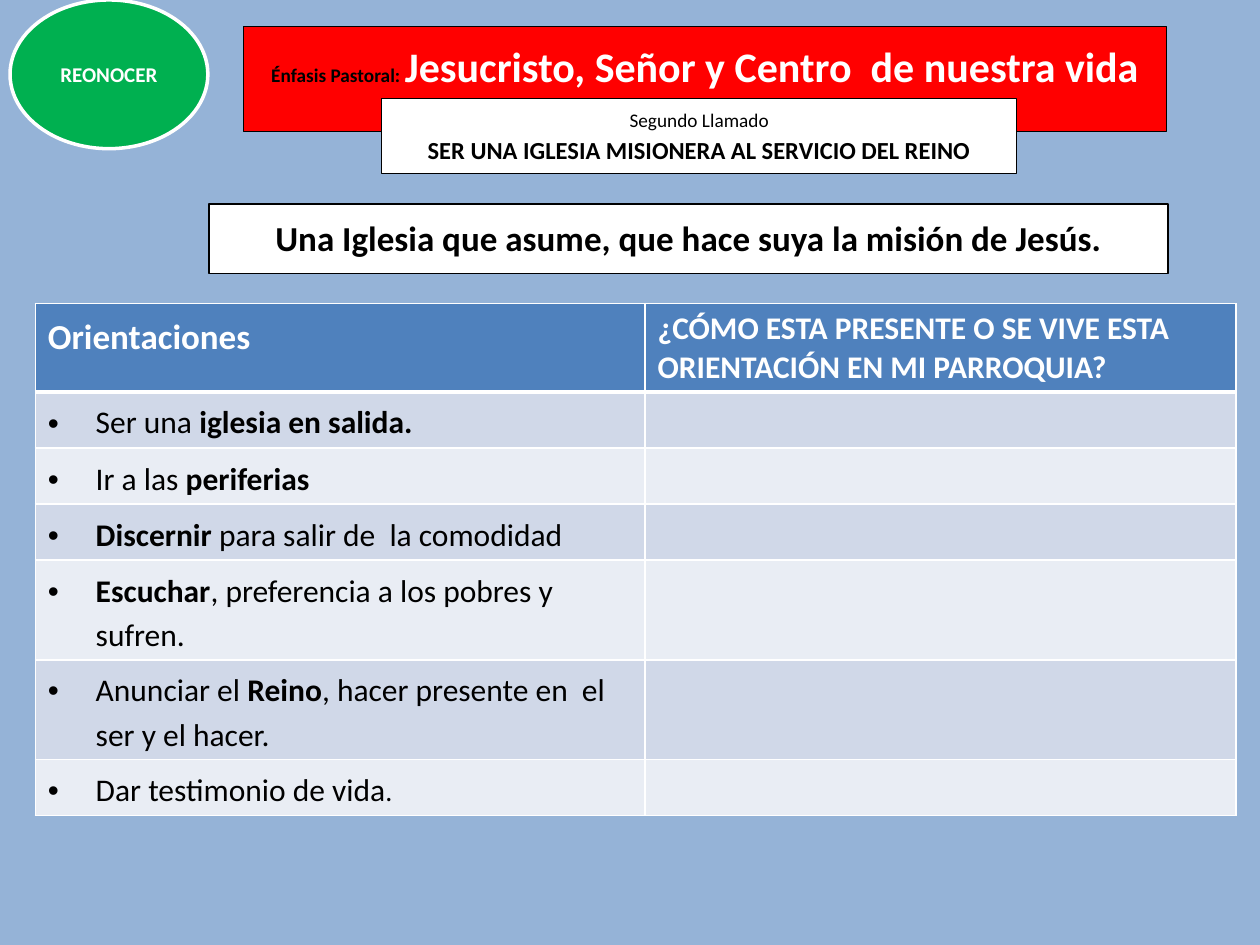
from pptx import Presentation
from pptx.dml.color import RGBColor as Rgb
from pptx.enum.shapes import MSO_SHAPE as Kind
from pptx.enum.text import MSO_ANCHOR as Anchor, MSO_AUTO_SIZE as Auto, PP_ALIGN as Align
from pptx.oxml.ns import qn
from pptx.util import Inches, Pt
from lxml.etree import SubElement as Sub

WIDE, HIGH = Inches(10), Inches(7.5)
COLS, ROWS = 100, 75
FONT = "Calibri"
SKY = Rgb(0x95, 0xB3, 0xD7)
GREEN = Rgb(0x00, 0xB0, 0x50)
RED = Rgb(0xFF, 0x00, 0x00)
WHITE = Rgb(0xFF, 0xFF, 0xFF)
BLACK = Rgb(0x00, 0x00, 0x00)
BLUE = Rgb(0x4F, 0x81, 0xBD)
BANDS = [Rgb(0xD0, 0xD8, 0xE8), Rgb(0xE9, 0xED, 0xF4)]

HEADS = [
    ("Orientaciones", 20, 1.15),
    ("¿CÓMO ESTA PRESENTE O SE VIVE ESTA ORIENTACIÓN EN MI PARROQUIA?", 18, 1.0),
]
ITEMS = [
    [("Ser una ", {}), ("iglesia en salida.", {"bold": True})],
    [("Ir a las ", {}), ("periferias", {"bold": True})],
    [("Discernir", {"bold": True}), (" para salir de  la comodidad", {})],
    [("Escuchar", {"bold": True}), (", preferencia a los pobres y sufren.", {})],
    [("Anunciar el ", {}), ("Reino", {"bold": True}),
     (", hacer presente en  el ser y el hacer.", {})],
    [("Dar testimonio de vida", {}), (".", {"size": 16})],
]


def scale(box):
    x, y, w, h = box
    return [int(v) for v in (x * WIDE / COLS, y * HIGH / ROWS,
                             w * WIDE / COLS, h * HIGH / ROWS)]


def write(para, text, size=18, color=BLACK, bold=False, align=None, space=None):
    run = para.add_run()
    run.text = text
    font = run.font
    font.name, font.size, font.bold = FONT, Pt(size), bold
    font.color.rgb = color
    if align is not None:
        para.alignment = align
    if space is not None:
        para.line_spacing = space


def paint(shape, fill, line, width, anchor=Anchor.TOP):
    shape.fill.solid()
    shape.fill.fore_color.rgb = fill
    shape.line.color.rgb = line
    shape.line.width = Pt(width)
    frame = shape.text_frame
    frame.word_wrap = True
    frame.vertical_anchor = anchor
    return frame


def panel(slide, box, kind=Kind.RECTANGLE, fill=WHITE, line=BLACK, width=0.75, **look):
    shape = slide.shapes.add_shape(kind, *scale(box))
    shape.shadow.inherit = False
    return paint(shape, fill, line, width, **look)


def badge(slide, box):
    frame = panel(slide, box, Kind.OVAL, GREEN, WHITE, 2, anchor=Anchor.MIDDLE)
    write(frame.paragraphs[0], "REONOCER", size=12, color=WHITE, bold=True,
          align=Align.CENTER)


def banner(slide, box):
    title = slide.shapes.title
    title.left, title.top, title.width, title.height = scale(box)
    frame = paint(title, RED, BLACK, 0.75)
    frame.auto_size = Auto.SHAPE_TO_FIT_TEXT
    para = frame.paragraphs[0]
    write(para, "Énfasis Pastoral: ", size=11, bold=True, align=Align.CENTER, space=1.15)
    write(para, "Jesucristo, Señor y Centro  de nuestra vida", size=24,
          color=WHITE, bold=True)


def call(slide, box):
    frame = panel(slide, box)
    write(frame.paragraphs[0], "Segundo Llamado", size=11, align=Align.CENTER, space=1.15)
    write(frame.add_paragraph(), "SER UNA IGLESIA MISIONERA AL SERVICIO DEL REINO",
          size=14, bold=True, align=Align.CENTER, space=1.15)


def theme(slide, box):
    frame = panel(slide, box)
    write(frame.paragraphs[0], "Una Iglesia que asume, que hace suya la misión de Jesús.",
          size=20, bold=True, align=Align.CENTER, space=1.15)


def edge(cell, fill, top=1, base=1):
    props = cell._tc.get_or_add_tcPr()
    for side, width in (("L", 1), ("R", 1), ("T", top), ("B", base)):
        line = Sub(props, qn("a:ln" + side), w=str(Pt(width)))
        Sub(Sub(line, qn("a:solidFill")), qn("a:srgbClr"), val=str(WHITE))
    cell.fill.solid()
    cell.fill.fore_color.rgb = fill


def bullet(para):
    props = para._p.get_or_add_pPr()
    props.set("marL", str(Inches(0.38)))
    props.set("indent", str(-Inches(0.38)))
    Sub(props, qn("a:buFont"), typeface="Arial")
    Sub(props, qn("a:buChar"), char="•")


def grid(slide, box):
    count = len(ITEMS) + 1
    left, top, wide, high = scale(box)
    table = slide.shapes.add_table(count, 2, left, top, wide, high).table
    table.columns[0].width = int(wide * 4.84 / 9.53)
    table.columns[1].width = wide - table.columns[0].width
    for col, (text, size, space) in enumerate(HEADS):
        cell = table.cell(0, col)
        edge(cell, BLUE, base=3)
        write(cell.text_frame.paragraphs[0], text, size=size, color=WHITE,
              bold=True, space=space)
    for row, parts in enumerate(ITEMS, 1):
        for col in range(2):
            edge(table.cell(row, col), BANDS[(row - 1) % 2], top=3 if row == 1 else 1)
        para = table.cell(row, 0).text_frame.paragraphs[0]
        para.line_spacing = 1.15
        bullet(para)
        for text, look in parts:
            write(para, text, **look)


def main():
    deck = Presentation()
    deck.slide_width, deck.slide_height = WIDE, HIGH
    slide = deck.slides.add_slide(deck.slide_layouts[5])
    back = slide.background.fill
    back.solid()
    back.fore_color.rgb = SKY
    badge(slide, (0.8, 0, 15.7, 11.8))
    banner(slide, (19.3, 2.1, 73.3, 5.2))
    grid(slide, (2.8, 24.1, 95.3, 28.7))
    call(slide, (30.3, 7.8, 50.4, 6))
    theme(slide, (16.6, 16.2, 76.1, 5.5))
    deck.save("out.pptx")


if __name__ == "__main__":
    main()
